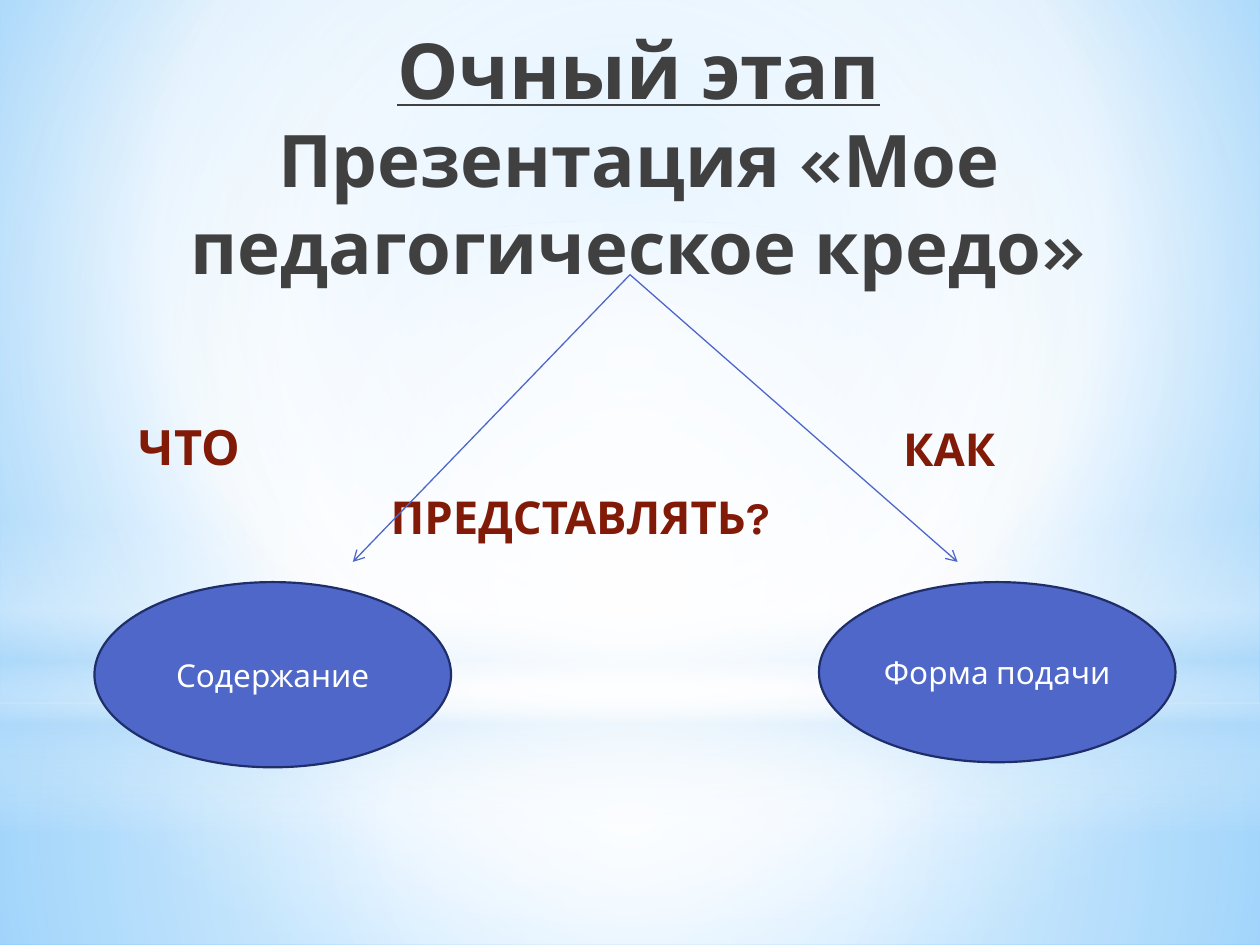
import pptx
import pptx.dml.color
import pptx.enum.shapes
import pptx.enum.text
import pptx.oxml
import pptx.oxml.ns
import pptx.util

Inches = pptx.util.Inches
Pt = pptx.util.Pt
RGBColor = pptx.dml.color.RGBColor
MSO_SHAPE = pptx.enum.shapes.MSO_SHAPE
PP_ALIGN = pptx.enum.text.PP_ALIGN
MSO_ANCHOR = pptx.enum.text.MSO_ANCHOR
MSO_AUTO_SIZE = pptx.enum.text.MSO_AUTO_SIZE
qn = pptx.oxml.ns.qn

WHITE = RGBColor(0xFF, 0xFF, 0xFF)
SKY = RGBColor(0x9E, 0xD5, 0xFF)
DEEP_SKY = RGBColor(0x5B, 0xB9, 0xFF)
HAZE = RGBColor(0xB4, 0xDC, 0xFA)
CHARCOAL = RGBColor(0x40, 0x40, 0x40)
BRICK = RGBColor(0x82, 0x1A, 0x08)
INDIGO = RGBColor(0x4E, 0x67, 0xC8)
NAVY = RGBColor(0x1F, 0x2E, 0x69)

FONT = "Karla"
CENTRE = (50, 50, 50, 50)
TOP_FRAME = {
    "auto_size": MSO_AUTO_SIZE.NONE,
    "word_wrap": True,
    "vertical_anchor": MSO_ANCHOR.TOP,
}


def apply_format(target, values):
    for name, value in values.items():
        setattr(target, name, value)


def place(part, box):
    apply_format(part, dict(zip(("left", "top", "width", "height"), map(Inches, box))))


def add_run(paragraph, text, size, color, **extra):
    run = paragraph.add_run()
    run.text = text
    apply_format(run.font, {"name": FONT, "size": Pt(size), **extra})
    run.font.color.rgb = color


def paint_gradient(fill, element, stops, focus=None):
    fill.gradient()
    current = element.find(".//" + qn("a:gradFill"))
    stop_xml = "".join(
        f'<a:gs pos="{position * 1000}"><a:srgbClr val="{color}">'
        f'<a:alpha val="{alpha * 1000}"/></a:srgbClr></a:gs>'
        for position, color, alpha in stops
    )
    if focus:
        sides = " ".join(f'{side}="{value * 1000}"' for side, value in zip("ltrb", focus))
        direction = f'<a:path path="circle"><a:fillToRect {sides}/></a:path>'
    else:
        direction = '<a:lin ang="5400000" scaled="0"/>'
    gradient = pptx.oxml.parse_xml(
        f'<a:gradFill {pptx.oxml.ns.nsdecls("a")} rotWithShape="1">'
        f"<a:gsLst>{stop_xml}</a:gsLst>{direction}</a:gradFill>"
    )
    current.getparent().replace(current, gradient)


def add_backdrop(slide):
    paint_gradient(slide.background.fill, slide.element,
                   [(0, SKY, 100), (60, WHITE, 100), (100, DEEP_SKY, 100)], (20, 10, 20, 60))
    layers = [
        (MSO_SHAPE.RECTANGLE, (0, 5.58, 10, 1.92),
         [(0, WHITE, 91), (37, WHITE, 76), (100, HAZE, 79)], CENTRE),
        (MSO_SHAPE.RECTANGLE, (0, 0, 10, 5.58),
         [(0, WHITE, 89), (48, WHITE, 62), (100, HAZE, 79)], CENTRE),
        (MSO_SHAPE.RECTANGLE, (0, 4.12, 10, 2.5),
         [(0, WHITE, 0), (29, WHITE, 30), (45, HAZE, 40),
          (55, WHITE, 26), (65, HAZE, 60), (100, WHITE, 0)], None),
        (MSO_SHAPE.OVAL, (0, 1.75, 10, 5.58), [(0, WHITE, 100), (56, WHITE, 0)], CENTRE),
    ]
    for outline, box, stops, focus in layers:
        layer = slide.shapes.add_shape(outline, *map(Inches, box))
        layer.shadow.inherit = False
        layer.line.fill.background()
        paint_gradient(layer.fill, layer.element, stops, focus)


def bring_to_front(part):
    part.element.getparent().append(part.element)


def add_heading(slide, box):
    heading = slide.shapes.title
    bring_to_front(heading)
    place(heading, box)
    apply_format(heading.text_frame, {**TOP_FRAME, "margin_top": Inches(0.05)})
    paragraph = heading.text_frame.paragraphs[0]
    apply_format(paragraph, {"alignment": PP_ALIGN.CENTER, "line_spacing": 1.0})
    add_run(paragraph, "Очный этап", 44.1, CHARCOAL, bold=True, underline=True)
    paragraph.add_line_break()
    add_run(paragraph, "Презентация «Мое педагогическое кредо»", 41.4, CHARCOAL,
            bold=True, underline=False)


def add_questions(slide, box):
    left, top, width, height = box
    questions = slide.placeholders[1]
    bring_to_front(questions)
    place(questions, box)
    frame = questions.text_frame
    apply_format(frame, {**TOP_FRAME, "margin_top": Inches(0.38)})
    lines = [("ЧТО", 27.8, 0.65, 0), ("ПРЕДСТАВЛЯТЬ?", 25.9, 2.65, 8.1)]
    for number, (word, size, indent, gap) in enumerate(lines):
        paragraph = frame.add_paragraph() if number else frame.paragraphs[0]
        apply_format(paragraph, {"space_before": Pt(gap), "space_after": Pt(0)})
        properties = paragraph._p.get_or_add_pPr()
        properties.set("marL", "0")
        properties.set("indent", str(Inches(indent)))
        properties.append(pptx.oxml.parse_xml(f'<a:buNone {pptx.oxml.ns.nsdecls("a")}/>'))
        add_run(paragraph, word, size, BRICK, bold=True)

    manner = slide.shapes.add_textbox(
        *map(Inches, (left + 6.72, top + 0.36, 1.2, 0.6)))
    apply_format(manner.text_frame, TOP_FRAME)
    add_run(manner.text_frame.paragraphs[0], "КАК", 25.9, BRICK, bold=True)


def add_branch(slide, start, end):
    branch = slide.shapes.add_connector(
        pptx.enum.shapes.MSO_CONNECTOR.STRAIGHT, *map(Inches, start + end))
    branch.line.color.rgb = INDIGO
    branch.line.width = Pt(0.75)
    properties = branch.element.spPr
    properties.find(qn("a:ln")).append(
        pptx.oxml.parse_xml(f'<a:tailEnd {pptx.oxml.ns.nsdecls("a")} type="arrow"/>'))
    properties.append(pptx.oxml.parse_xml(f'<a:effectLst {pptx.oxml.ns.nsdecls("a")}/>'))


def add_answer(slide, box, text):
    answer = slide.shapes.add_shape(MSO_SHAPE.OVAL, *map(Inches, box))
    answer.shadow.inherit = False
    answer.fill.solid()
    answer.fill.fore_color.rgb = INDIGO
    answer.line.color.rgb = NAVY
    answer.line.width = Pt(1.25)
    apply_format(answer.text_frame, {"word_wrap": True, "vertical_anchor": MSO_ANCHOR.MIDDLE})
    paragraph = answer.text_frame.paragraphs[0]
    paragraph.alignment = PP_ALIGN.CENTER
    add_run(paragraph, text, 18, WHITE)


def main():
    presentation = pptx.Presentation()
    presentation.slide_width = Inches(10)
    presentation.slide_height = Inches(7.5)
    slide = presentation.slides.add_slide(presentation.slide_layouts[1])
    add_backdrop(slide)
    add_heading(slide, (1.06, 0.13, 8.02, 2.05))
    add_questions(slide, (0.35, 2.93, 9.21, 2.41))
    for end_x in (7.6, 2.8):
        add_branch(slide, (5, 2.18), (end_x, 4.46))
    add_answer(slide, (0.75, 4.62, 2.83, 1.47), "Содержание")
    add_answer(slide, (6.5, 4.62, 2.83, 1.43), "Форма подачи")
    presentation.save("out.pptx")


if __name__ == "__main__":
    main()
